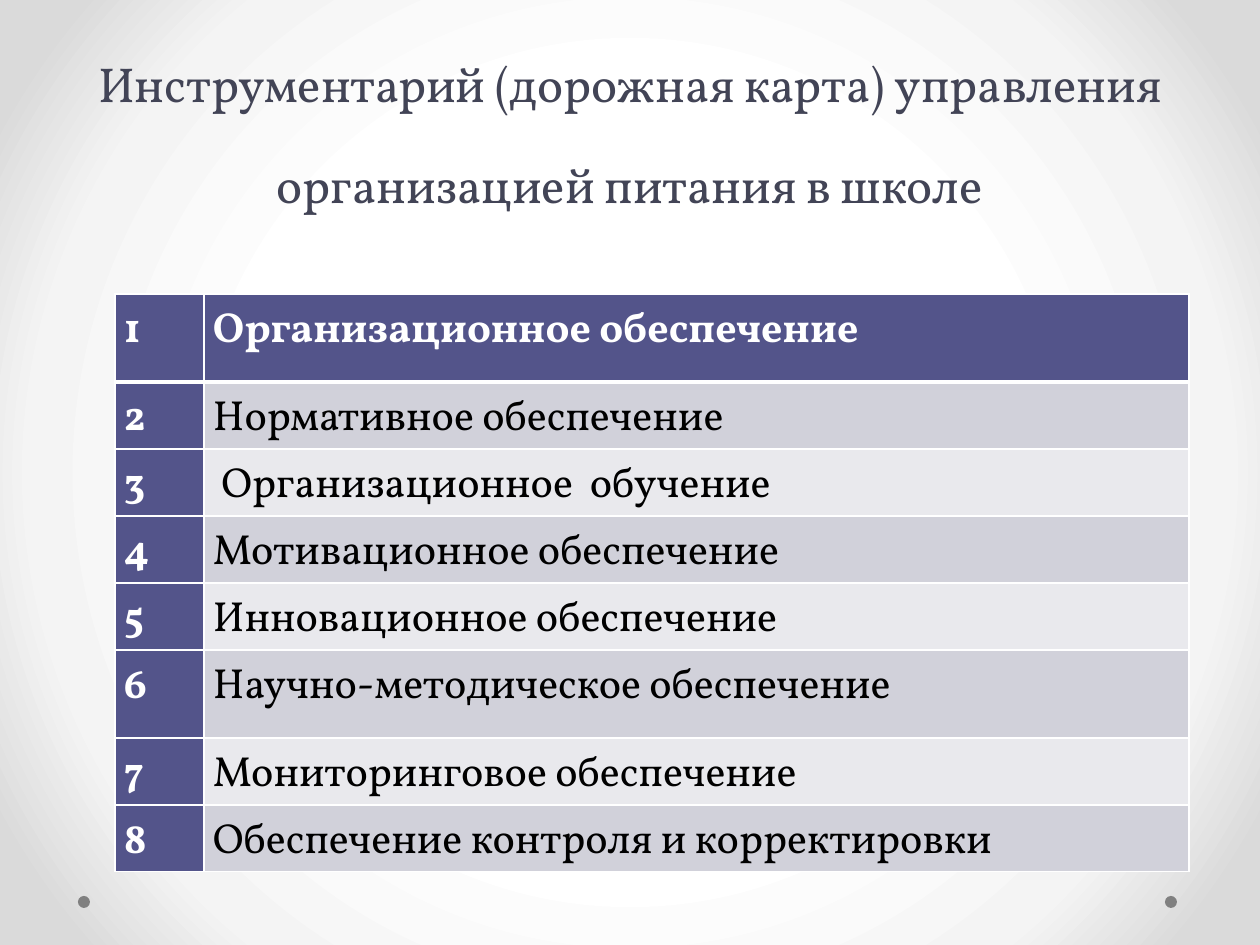
"""Build the slide listing the tools for managing school meals."""
from lxml.etree import SubElement
from pptx import Presentation
from pptx.dml.color import RGBColor
from pptx.enum.shapes import MSO_SHAPE
from pptx.enum.text import MSO_ANCHOR, PP_ALIGN
from pptx.oxml.ns import qn
from pptx.util import Pt

PX = 914400 / 126
FONT = "Vollkorn"
COLORS = {
    "title": "424456", "accent": "53548A", "band": "D1D1DA", "light_band": "E9E9ED",
    "white": "FFFFFF", "black": "000000", "dot": "808080",
}
BACKGROUND_STOPS = [(50, "FFFFFF"), (76, "F4F4F4"), (92, "DADADA")]
TOPICS = [
    "Организационное обеспечение",
    "Нормативное обеспечение",
    " Организационное  обучение",
    "Мотивационное обеспечение",
    "Инновационное обеспечение",
    "Научно-методическое обеспечение",
    "Мониторинговое обеспечение",
    "Обеспечение контроля и корректировки",
]
COLUMN_WIDTHS = [89, 985]
ROW_HEIGHTS = [88, 67, 67, 67, 67, 88, 67, 67]


def px(*lengths):
    return [round(length * PX) for length in lengths]


def style(paragraph, size, color, bold=False):
    paragraph.font.name = FONT
    paragraph.font.size = Pt(size)
    paragraph.font.bold = bold
    paragraph.font.color.rgb = RGBColor.from_string(COLORS[color])


presentation = Presentation()
presentation.slide_width, presentation.slide_height = px(1260, 945)
slide = presentation.slides.add_slide(presentation.slide_layouts[6])

slide.background.fill.gradient()
gradient = slide.background._cSld.find(".//" + qn("a:gradFill"))
for child in list(gradient):
    gradient.remove(child)
stops = SubElement(gradient, qn("a:gsLst"))
for position, color in BACKGROUND_STOPS:
    stop = SubElement(stops, qn("a:gs"), pos=str(position * 1000))
    SubElement(stop, qn("a:srgbClr"), val=color)
circle = SubElement(gradient, qn("a:path"), {"path": "circle"})
SubElement(circle, qn("a:fillToRect"), {side: "50000" for side in "ltrb"})

for left in (1165, 78):
    dot = slide.shapes.add_shape(MSO_SHAPE.OVAL, *px(left, 896, 12, 12))
    dot.shadow.inherit = False
    dot.fill.solid()
    dot.fill.fore_color.rgb = RGBColor.from_string(COLORS["dot"])
    dot.line.fill.background()

title = slide.shapes.add_textbox(*px(63, 0, 1134, 220)).text_frame
title.word_wrap = True
title.vertical_anchor = MSO_ANCHOR.BOTTOM
title.text = "Инструментарий (дорожная карта) управления организацией питания в школе"
paragraph = title.paragraphs[0]
paragraph.alignment = PP_ALIGN.CENTER
paragraph.line_spacing = Pt(58)
style(paragraph, 28, "title")

table = slide.shapes.add_table(
    len(TOPICS), 2, *px(115, 294, sum(COLUMN_WIDTHS), sum(ROW_HEIGHTS))
).table
for column, width in zip(table.columns, px(*COLUMN_WIDTHS)):
    column.width = width
for row, height in zip(table.rows, px(*ROW_HEIGHTS)):
    row.height = height

for row_index, topic in enumerate(TOPICS):
    for column_index, text in enumerate((str(row_index + 1), topic)):
        cell = table.cell(row_index, column_index)
        header = row_index == 0 or column_index == 0
        cell.margin_left, cell.margin_right, cell.margin_top, cell.margin_bottom = px(9, 9, 0, 0)
        thick_side = {0: "B", 1: "T"}.get(row_index)
        for side in "LRTB":
            width = Pt(3 if side == thick_side else 1)
            border = SubElement(cell._tc.get_or_add_tcPr(), qn(f"a:ln{side}"), w=str(width))
            fill = SubElement(border, qn("a:solidFill"))
            SubElement(fill, qn("a:srgbClr"), val=COLORS["white"])
        band = "band" if row_index % 2 else "light_band"
        cell.fill.solid()
        cell.fill.fore_color.rgb = RGBColor.from_string(COLORS["accent" if header else band])
        cell.text = text
        paragraph = cell.text_frame.paragraphs[0]
        paragraph.alignment = PP_ALIGN.JUSTIFY if row_index < 3 else PP_ALIGN.LEFT
        paragraph.line_spacing = 1.15
        paragraph.space_after = Pt(10)
        style(paragraph, 24, "white" if header else "black", header)

presentation.save("out.pptx")
